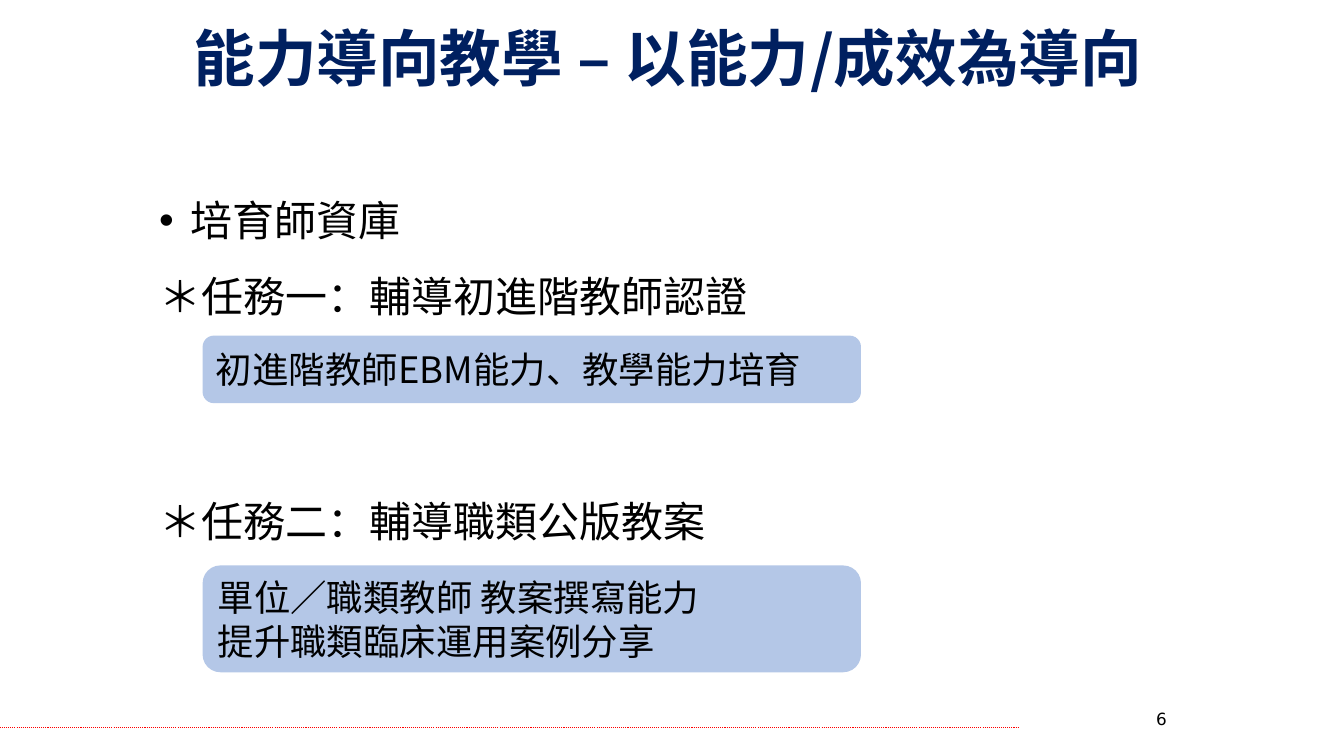
from pptx import Presentation
from pptx.dml.color import RGBColor
from pptx.enum.dml import MSO_LINE
from pptx.enum.shapes import MSO_CONNECTOR, MSO_SHAPE
from pptx.enum.text import MSO_ANCHOR, PP_ALIGN
from pptx.oxml.ns import qn
from pptx.util import Emu, Pt
from lxml import etree

LEFT, CENTER, RIGHT = PP_ALIGN.LEFT, PP_ALIGN.CENTER, PP_ALIGN.RIGHT
TOP, MIDDLE, BOTTOM = MSO_ANCHOR.TOP, MSO_ANCHOR.MIDDLE, MSO_ANCHOR.BOTTOM
ROUND = MSO_SHAPE.ROUNDED_RECTANGLE
DOTS = MSO_LINE.ROUND_DOT
STRAIGHT = MSO_CONNECTOR.STRAIGHT
PX = 9144  # 100 px to the inch


def px(*sizes):
    return [Emu(size * PX) for size in sizes]


def color(text):
    return RGBColor.from_string(text)


class Deck:
    font = "Noto Sans CJK SC"
    ink, navy, blue, red = "000000", "002060", "B4C7E7", "FF0000"

    def __init__(self, wide, high):
        self.show = Presentation()
        self.show.slide_width, self.show.slide_height = px(wide, high)
        self.slide = self.show.slides.add_slide(self.show.slide_layouts[6])

    def add_run(self, para, text, size, ink=None, bold=False, font=None):
        run = para.add_run()
        run.text = text
        run.font.size, run.font.bold = Pt(size), bold
        run.font.name = font or self.font
        run.font.color.rgb = color(ink or self.ink)
        east = etree.SubElement(run.font._element, qn("a:ea"))
        east.set("typeface", font or self.font)

    def fill(self, shape, lines, size, pitch=None, align=LEFT, anchor=TOP, **look):
        frame = shape.text_frame
        frame.word_wrap, frame.vertical_anchor = True, anchor
        for i, line in enumerate(lines):
            para = frame.paragraphs[0] if i == 0 else frame.add_paragraph()
            para.alignment = align
            if pitch:
                para.line_spacing = Pt(pitch)
            self.add_run(para, line, size, **look)
        return frame.paragraphs

    def text(self, box, lines, size, **look):
        shape = self.slide.shapes.add_textbox(*px(*box))
        return self.fill(shape, lines, size, **look)

    def card(self, box, lines, size, **look):
        shape = self.slide.shapes.add_shape(ROUND, *px(*box))
        shape.shadow.inherit = False
        shape.fill.solid()
        shape.fill.fore_color.rgb = color(self.blue)
        shape.line.fill.background()
        self.fill(shape, lines, size, anchor=MIDDLE, **look)

    def bullet(self, para, indent):
        props = para._p.get_or_add_pPr()
        props.set("marL", str(indent * PX))
        props.set("indent", str(-indent * PX))
        etree.SubElement(props, qn("a:buFont")).set("typeface", "Arial")
        etree.SubElement(props, qn("a:buChar")).set("char", "•")

    def rule(self, *ends):
        line = self.slide.shapes.add_connector(STRAIGHT, *px(*ends))
        line.line.color.rgb = color(self.red)
        line.line.width, line.line.dash_style = Pt(0.75), DOTS
        etree.SubElement(line._element.spPr, qn("a:effectLst"))


def main():
    deck = Deck(1333, 750)

    # Footer
    deck.rule(0, 722, 1011, 722)
    deck.text((950, 698, 217, 52), ["6"], 12, align=RIGHT, font="DejaVu Sans")

    # Title
    deck.text((79, 0, 1167, 98), ["能力導向教學 – 以能力/成效為導向"], 44,
              pitch=53, align=CENTER, anchor=BOTTOM, ink=deck.navy, bold=True)

    # Tasks, with room for the first card between them
    tasks = deck.text((148, 163, 858, 389), [
        "培育師資庫", "＊任務一：輔導初進階教師認證", "＊任務二：輔導職類公版教案",
    ], 30, pitch=54)
    deck.bullet(tasks[0], 31)
    tasks[2].space_before = Pt(107)

    # Cards
    for top, high, lines in (
        (333, 67, ["初進階教師EBM能力、教學能力培育"]),
        (561, 106, ["單位／職類教師 教案撰寫能力", "提升職類臨床運用案例分享"]),
    ):
        deck.card((201, top, 653, high), lines, 26, pitch=31)

    deck.show.save("out.pptx")


if __name__ == "__main__":
    main()
